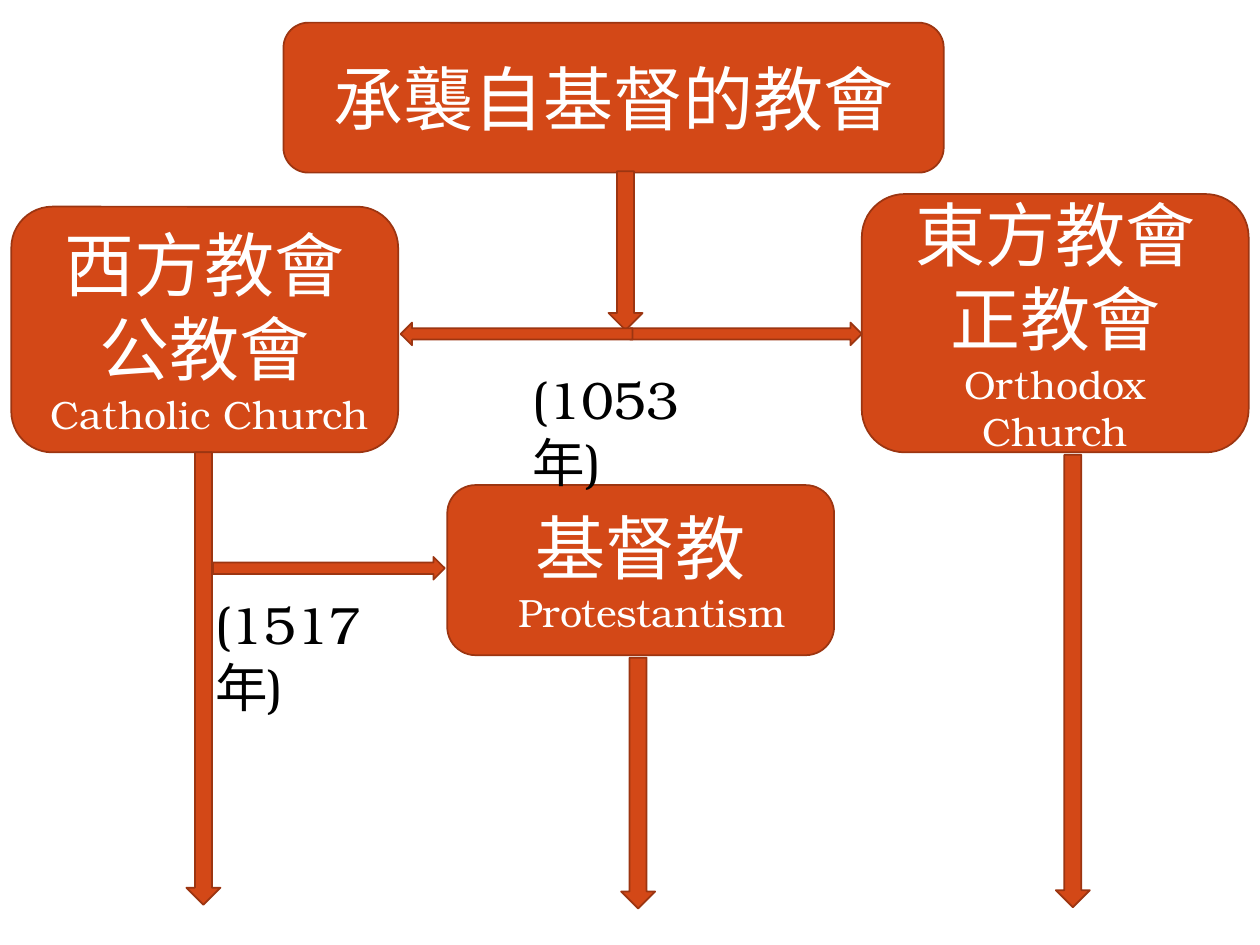
from typing import NamedTuple

from pptx import Presentation
from pptx.dml.color import RGBColor
from pptx.enum.shapes import MSO_SHAPE
from pptx.enum.text import MSO_ANCHOR, MSO_AUTO_SIZE, PP_ALIGN
from pptx.util import Inches, Pt

ROUNDED = MSO_SHAPE.ROUNDED_RECTANGLE
DOWN = MSO_SHAPE.DOWN_ARROW
RIGHT = MSO_SHAPE.RIGHT_ARROW
MIDDLE = MSO_ANCHOR.MIDDLE
CENTER = PP_ALIGN.CENTER
LEFT = PP_ALIGN.LEFT
GROW = MSO_AUTO_SIZE.SHAPE_TO_FIT_TEXT

FONT = "TeX Gyre Bonum"
COLORS = {"fill": "D34817", "outline": "9C3511", "light": "FFFFFF", "dark": "000000"}
CHURCH_WIDTH = 3.07
DOWN_WIDTH = 0.27
RIGHT_LENGTH, RIGHT_HEIGHT = 1.84, 0.18


class Church(NamedTuple):
    left: float
    top: float
    width: float
    height: float
    names: list[str]
    english: str = ""
    english_indent: float = 0


class Arrow(NamedTuple):
    kind: MSO_SHAPE
    left: float
    top: float
    length: float
    rotation: int = 0


class YearLabel(NamedTuple):
    left: float
    top: float
    width: float
    text: str


CHURCHES = [
    Church(2.25, 0.18, 5.24, 1.19, ["承襲自基督的教會"]),
    Church(6.84, 1.54, CHURCH_WIDTH, 2.05, ["東方教會", "正教會"], "Orthodox Church"),
    Church(0.09, 1.64, CHURCH_WIDTH, 1.95, ["西方教會", "公教會"], "Catholic Church", 0.08),
    Church(3.55, 3.85, CHURCH_WIDTH, 1.35, ["基督教"], "Protestantism", 0.18),
]
ARROWS = [
    Arrow(DOWN, 4.83, 1.36, 1.26),
    Arrow(RIGHT, 5.0, 2.56, RIGHT_LENGTH),
    Arrow(RIGHT, 3.18, 2.56, RIGHT_LENGTH, 180),
    Arrow(DOWN, 8.38, 3.61, 3.59),
    Arrow(DOWN, 1.48, 3.59, 3.59),
    Arrow(RIGHT, 1.69, 4.42, RIGHT_LENGTH),
    Arrow(DOWN, 4.93, 5.22, 1.99),
]
YEAR_LABELS = [
    YearLabel(4.13, 2.86, 1.84, "(1053年)"),
    YearLabel(1.61, 4.65, 1.71, "(1517年)"),
]


def write(para, text: str, *, size: float, color: str, align=LEFT, indent: float = 0) -> None:
    para.alignment = align
    if indent:
        para._p.get_or_add_pPr().set("marL", str(Inches(indent)))
    span = para.add_run()
    span.text = text
    span.font.name = FONT
    span.font.size = Pt(size)
    span.font.color.rgb = RGBColor.from_string(COLORS[color])


def add_filled_shape(slide, kind, left: float, top: float, width: float, height: float):
    shape = slide.shapes.add_shape(
        kind, Inches(left), Inches(top), Inches(width), Inches(height))
    shape.shadow.inherit = False
    shape.fill.solid()
    shape.fill.fore_color.rgb = RGBColor.from_string(COLORS["fill"])
    shape.line.color.rgb = RGBColor.from_string(COLORS["outline"])
    shape.line.width = Pt(1)
    return shape


def draw_church(slide, church: Church) -> None:
    box = add_filled_shape(
        slide, ROUNDED, church.left, church.top, church.width, church.height)
    frame = box.text_frame
    frame.word_wrap = True
    frame.vertical_anchor = MIDDLE
    frame.margin_left = frame.margin_right = Inches(0.12)
    for index, name in enumerate(church.names):
        para = frame.add_paragraph() if index else frame.paragraphs[0]
        write(para, name, size=40, color="light", align=CENTER)
    if church.english:
        write(frame.add_paragraph(), church.english, size=22.5, color="light",
              align=CENTER, indent=church.english_indent)


def draw_arrow(slide, arrow: Arrow) -> None:
    if arrow.kind == DOWN:
        width, height = DOWN_WIDTH, arrow.length
    else:
        width, height = arrow.length, RIGHT_HEIGHT
    shape = add_filled_shape(slide, arrow.kind, arrow.left, arrow.top, width, height)
    shape.rotation = arrow.rotation


def draw_year(slide, label: YearLabel) -> None:
    box = slide.shapes.add_textbox(
        Inches(label.left), Inches(label.top), Inches(label.width), Inches(0.61))
    frame = box.text_frame
    frame.word_wrap = True
    frame.auto_size = GROW
    write(frame.paragraphs[0], label.text, size=30, color="dark")


def main() -> None:
    deck = Presentation()
    deck.slide_width, deck.slide_height = Inches(10), Inches(7.5)
    page = deck.slides.add_slide(deck.slide_layouts[6])
    for church in CHURCHES:
        draw_church(page, church)
    for arrow in ARROWS:
        draw_arrow(page, arrow)
    for label in YEAR_LABELS:
        draw_year(page, label)
    deck.save("out.pptx")


if __name__ == "__main__":
    main()
